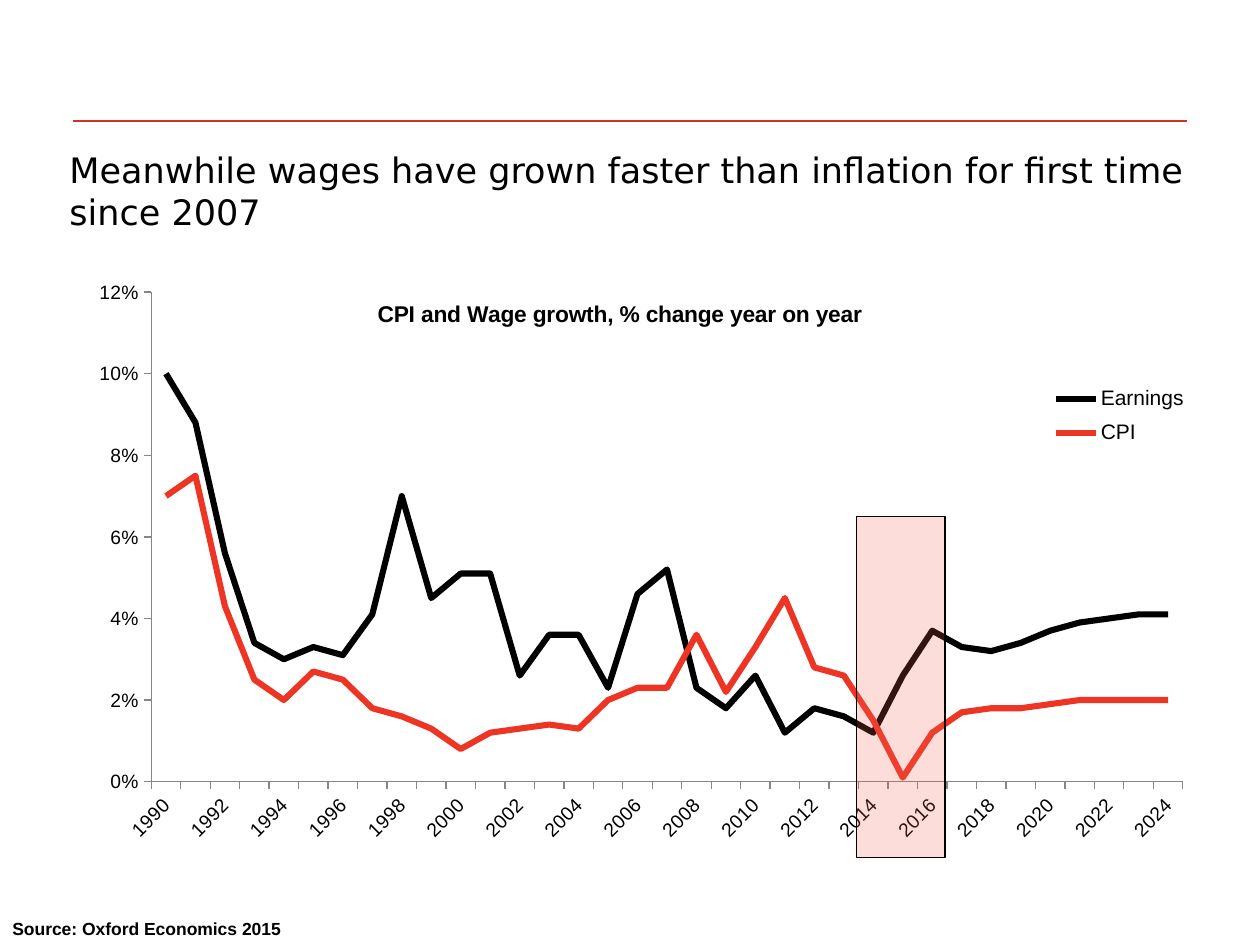
from lxml.etree import SubElement
from pptx import Presentation
from pptx.chart.data import CategoryChartData
from pptx.dml.color import RGBColor
from pptx.enum.chart import XL_LEGEND_POSITION, XL_MARKER_STYLE, XL_TICK_LABEL_POSITION, XL_TICK_MARK
from pptx.enum.chart import XL_CHART_TYPE
from pptx.enum.shapes import MSO_CONNECTOR, MSO_SHAPE
from pptx.enum.text import MSO_ANCHOR
from pptx.oxml import parse_xml
from pptx.oxml.ns import nsdecls, qn
from pptx.util import Cm, Pt

COLORS = {"text": "000000", "rule": "CD3425", "earnings": "000000",
          "cpi": "EE3524", "highlight": "F26354", "axis": "868686"}

# Yearly growth in percent, 1990 to 2024
YEARS = range(1990, 2025)
EARNINGS = [10, 8.8, 5.6, 3.4, 3, 3.3, 3.1, 4.1, 7, 4.5, 5.1, 5.1, 2.6, 3.6, 3.6, 2.3, 4.6, 5.2,
            2.3, 1.8, 2.6, 1.2, 1.8, 1.6, 1.2, 2.6, 3.7, 3.3, 3.2, 3.4, 3.7, 3.9, 4, 4.1, 4.1]
CPI = [7, 7.5, 4.3, 2.5, 2, 2.7, 2.5, 1.8, 1.6, 1.3, 0.8, 1.2, 1.3, 1.4, 1.3, 2, 2.3, 2.3,
       3.6, 2.2, 3.3, 4.5, 2.8, 2.6, 1.5, 0.1, 1.2, 1.7, 1.8, 1.8, 1.9, 2, 2, 2, 2]


def rgb(name):
    return RGBColor.from_string(COLORS[name])


def set_font(font, size, name="Arial", bold=False, color="text"):
    font.name, font.size, font.bold = name, Pt(size), bold
    font.color.rgb = rgb(color)


def write(frame, text, **font_format):
    paragraph = frame.paragraphs[0]
    run = paragraph.add_run()
    run.text = text
    set_font(run.font, **font_format)


def place(part, index, x, y, w=None, h=None, inner=False):
    """Give a chart part a fixed place, in fractions of the chart."""
    for old in part.findall(qn("c:layout")):
        part.remove(old)
    layout = parse_xml(f"<c:layout {nsdecls('c')}><c:manualLayout/></c:layout>")
    settings = [("layoutTarget", "inner")] if inner else []
    settings += [("xMode", "edge"), ("yMode", "edge"), ("x", x), ("y", y), ("w", w), ("h", h)]
    for tag, value in settings:
        if value is not None:
            SubElement(layout[0], qn(f"c:{tag}")).set("val", str(value))
    part.insert(index, layout)


class SlideBuilder:
    def __init__(self, slide):
        self.slide = slide
        self.shapes = slide.shapes

    def text(self, text, left, top, width, height, anchor=MSO_ANCHOR.TOP, inset=0.25, **font_format):
        frame = self.shapes.add_textbox(Cm(left), Cm(top), Cm(width), Cm(height)).text_frame
        frame.word_wrap = True
        frame.vertical_anchor = anchor
        frame.margin_left = Cm(inset)
        write(frame, text, **font_format)

    def rule(self, x1, x2, y):
        line = self.shapes.add_connector(MSO_CONNECTOR.STRAIGHT, Cm(x1), Cm(y), Cm(x2), Cm(y))
        line.line.color.rgb = rgb("rule")
        line.line.width = Pt(0.75)
        SubElement(line._element.spPr, qn("a:effectLst"))

    def highlight(self, left, top, width, height, opacity):
        box = self.shapes.add_shape(MSO_SHAPE.RECTANGLE, Cm(left), Cm(top), Cm(width), Cm(height))
        box.shadow.inherit = False
        box.fill.solid()
        box.fill.fore_color.rgb = rgb("highlight")
        fill_color = box._element.spPr.find(qn("a:solidFill"))[0]
        SubElement(fill_color, qn("a:alpha")).set("val", str(opacity * 1000))
        box.line.color.rgb = rgb("text")
        box.line.width = Pt(0.75)

    def line_chart(self, title, years, series, left, top, width, height):
        data = CategoryChartData(number_format="0%")
        data.categories = [str(year) for year in years]
        for name, percents, _ in series:
            data.add_series(name, [round(value / 100, 3) for value in percents])
        chart = self.shapes.add_chart(XL_CHART_TYPE.LINE, Cm(left), Cm(top), Cm(width), Cm(height),
                                      data).chart
        set_font(chart.font, 11)
        plot = chart.plots[0]
        plot.vary_by_categories = False
        for line, (_, _, color) in zip(plot.series, series):
            line.smooth = False
            line.marker.style = XL_MARKER_STYLE.NONE
            line.format.line.color.rgb = rgb(color)
            line.format.line.width = Pt(3.5)
        place(chart._chartSpace.chart.plotArea, 0, 0.072, 0.033, 0.919, 0.86, inner=True)
        self.chart_axes(chart)

        # Title over the plot
        write(chart.chart_title.text_frame, title, size=13, bold=True)
        heading = chart.chart_title._element
        place(heading, 1, 0.27, 0.04)
        heading.find(qn("c:overlay")).set("val", "1")

        # Legend inside the plot, on the right
        chart.has_legend = True
        chart.legend.position = XL_LEGEND_POSITION.RIGHT
        chart.legend.include_in_layout = False
        set_font(chart.legend.font, 12)
        place(chart.legend._element, 1, 0.87, 0.18, 0.13, 0.14)

    def chart_axes(self, chart):
        year_axis, growth_axis = chart.category_axis, chart.value_axis
        for axis in (year_axis, growth_axis):
            axis.has_major_gridlines = False
            axis.major_tick_mark = XL_TICK_MARK.OUTSIDE
            axis.minor_tick_mark = XL_TICK_MARK.NONE
            axis.format.line.color.rgb = rgb("axis")
            set_font(axis.tick_labels.font, 11)
        growth_axis.minimum_scale, growth_axis.maximum_scale = 0, 0.12
        growth_axis.major_unit = 0.02
        growth_axis.tick_labels.number_format = "0%"
        growth_axis.tick_labels.number_format_is_linked = False

        # Slanted labels on every second year
        year_axis.tick_label_position = XL_TICK_LABEL_POSITION.LOW
        year_xml = year_axis._element
        year_xml.find(qn("c:txPr")).find(qn("a:bodyPr")).set("rot", "-2700000")
        last = year_xml.find(qn("c:noMultiLvlLbl"))
        for tag, step in (("tickLblSkip", 2), ("tickMarkSkip", 1)):
            last.addprevious(parse_xml(f'<c:{tag} {nsdecls("c")} val="{step}"/>'))


def main():
    deck = Presentation()
    deck.slide_width, deck.slide_height = Cm(25.4), Cm(19.05)
    page = SlideBuilder(deck.slides.add_slide(deck.slide_layouts[6]))

    # Heading
    page.rule(1.47, 23.93, 2.44)
    page.text("Meanwhile wages have grown faster than inflation for first time since 2007",
              1.4, 2.87, 23.27, 1.6, inset=0, size=20, name="DejaVu Sans")

    # Source note
    page.text("Source: Oxford Economics 2015", 0, 17.32, 22.15, 1.73,
              anchor=MSO_ANCHOR.BOTTOM, size=10, bold=True)

    # Chart and the years it stresses
    page.line_chart("CPI and Wage growth, % change year on year", YEARS,
                    [("Earnings", EARNINGS, "earnings"), ("CPI", CPI, "cpi")],
                    1.42, 5.51, 22.63, 11.48)
    page.highlight(17.27, 10.41, 1.78, 6.88, opacity=21)

    deck.save("out.pptx")


if __name__ == "__main__":
    main()
